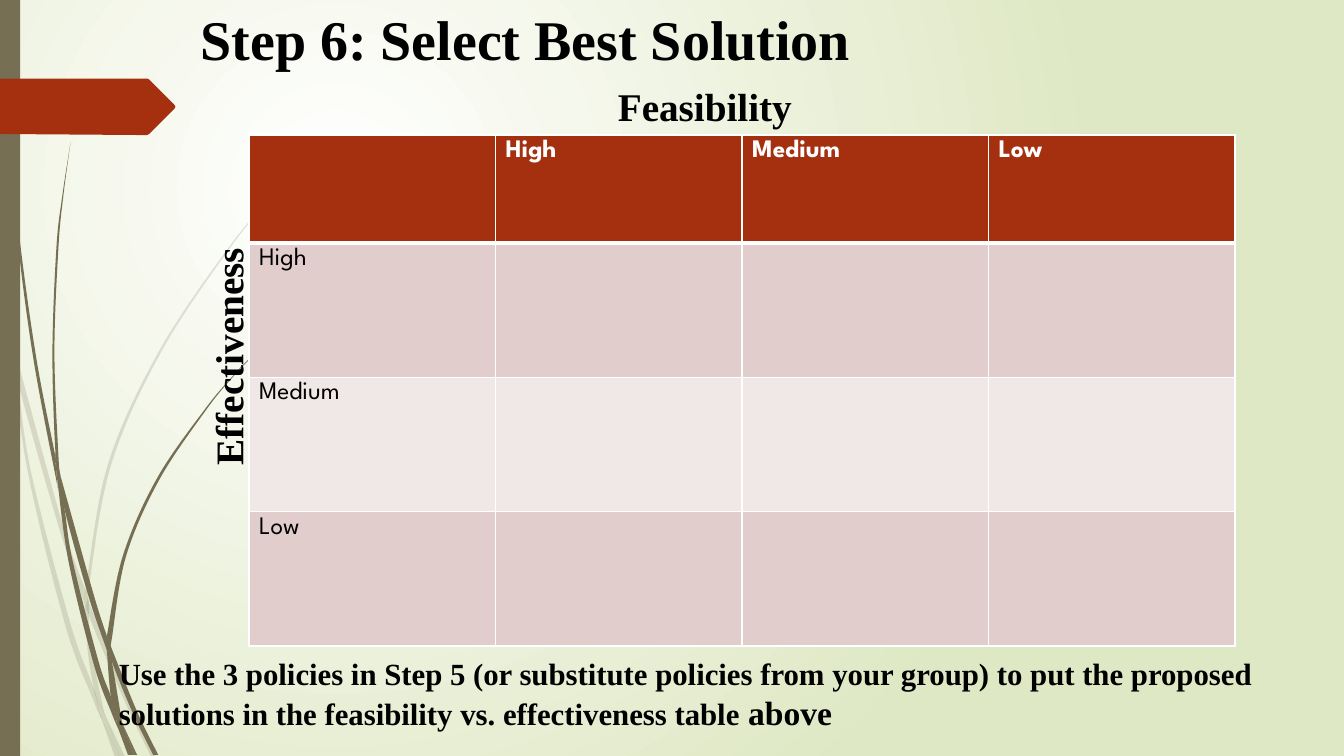
from lxml import etree
from pptx import Presentation
from pptx.dml.color import RGBColor as RGB
from pptx.enum.shapes import MSO_SHAPE as SHAPE
from pptx.enum.text import MSO_AUTO_SIZE as FIT
from pptx.oxml.ns import qn
from pptx.util import Pt

PX = 9144
BLACK = RGB(0, 0, 0)
WHITE = RGB(255, 255, 255)
PALE_GREEN = RGB(0xDF, 0xE8, 0xC4)
OLIVE = RGB(0x76, 0x6F, 0x54)
RUST = RGB(0xA5, 0x30, 0x10)
ROSE = RGB(0xE1, 0xCD, 0xCC)
BLUSH = RGB(0xF0, 0xE8, 0xE7)

FAINT_BLADES = [
    ([(0, 299), (10, 344), (11, 350)], [(11, 350), (9, 322), (0, 282)]),
    ([(14, 345), (17, 376), (58, 522), (84, 599)], [(85, 586), (62, 520), (14, 345)]),
    ([(88, 596), (88, 610), (123, 694), (150, 751)],
     [(155, 751), (127, 692), (92, 607), (88, 596)]),
    ([(105, 711), (119, 751)], [(124, 751), (105, 711)]),
    ([(11, 350), (28, 470), (65, 621), (92, 693), (101, 714)],
     [(99, 707), (93, 683), (70, 619), (31, 469), (17, 376), (11, 350)]),
    ([(84, 599), (87, 646), (93, 683), (96, 692), (105, 711)],
     [(103, 706), (91, 646), (88, 610), (88, 608), (84, 599)]),
    ([(312, 153), (289, 175), (268, 197), (228, 244), (158, 348), (107, 461),
      (85, 584), (85, 586)],
     [(88, 596), (88, 584), (110, 462), (160, 349), (229, 245), (268, 198),
      (290, 175), (312, 154)]),
    ([(101, 714), (114, 751)], [(119, 751), (101, 714)]),
    ([(85, 586), (84, 599), (88, 608)], [(88, 610), (88, 596), (85, 586)]),
    ([(93, 683), (99, 707), (101, 714), (119, 751)],
     [(119, 751), (105, 711), (96, 692), (93, 683)]),
]
DARK_BLADES = [
    ([(3, 0), (5, 48), (7, 110), (17, 233), (33, 355), (56, 477), (57, 481)],
     [(55, 457), (55, 453), (36, 355), (19, 232), (8, 109), (5, 48), (4, 0)]),
    ([(60, 472), (64, 505), (88, 592), (106, 645)],
     [(106, 633), (106, 631), (93, 590), (60, 472)]),
    ([(110, 641), (111, 656), (132, 708), (152, 749)],
     [(157, 749), (136, 706), (113, 649), (110, 641)]),
    ([(57, 477), (68, 557), (93, 659), (111, 708), (117, 722)],
     [(116, 717), (110, 691), (98, 657), (72, 556), (64, 505), (57, 477)]),
    ([(70, 141), (62, 193), (56, 245), (52, 349), (55, 449), (60, 472)],
     [(60, 472), (58, 453), (54, 349), (58, 245), (63, 193), (70, 141)]),
    ([(122, 719), (133, 749)], [(136, 749), (122, 719)]),
    ([(55, 449), (55, 453), (57, 477), (64, 505)], [(60, 472), (55, 449)]),
    ([(260, 344), (245, 358), (231, 373), (204, 405), (156, 474), (122, 551),
      (106, 631)],
     [(110, 641), (111, 633), (125, 552), (158, 476), (205, 406), (231, 374),
      (245, 359), (261, 344)]),
    ([(117, 722), (127, 749)], [(131, 749), (117, 722)]),
    ([(106, 645), (110, 691), (116, 706), (122, 719)],
     [(121, 716), (111, 656), (109, 651), (106, 645)]),
    ([(106, 631), (106, 645), (109, 651)], [(111, 656), (110, 641), (106, 631)]),
    ([(110, 691), (116, 717), (117, 722), (130, 749)],
     [(133, 749), (122, 719), (116, 706), (110, 691)]),
]
ARROW = [(0, 78), (146, 78), (148, 79), (173, 104), (174, 106), (173, 108),
         (148, 133), (146, 134), (136, 134), (0, 133)]
LEVELS = ["High", "Medium", "Low"]


def bends(edge):
    """Return the control points and end of each curve along an edge."""
    pts = [edge[0], *edge, edge[-1]]
    return [([q + (r - p) / 6 for p, q, r in zip(a, b, c)],
             [r - (o - q) / 6 for q, r, o in zip(b, c, d)], c)
            for a, b, c, d in zip(pts, pts[1:], pts[2:], pts[3:])]


class Deck:
    """Holds the slide and draws its elements in one style."""

    serif = "Times New Roman"
    sans = "League Spartan"

    def __init__(self, width, height):
        self.prs = Presentation()
        self.prs.slide_width, self.prs.slide_height = width * PX, height * PX
        self.s = self.prs.slides.add_slide(self.prs.slide_layouts[6])

    def background(self, inner, outer):
        fill = self.s.background.fill
        fill.gradient()
        for stop, color, position in zip(fill.gradient_stops, (inner, outer), (0, 1)):
            stop.color.rgb, stop.position = color, position
        lin = self.s.element.find(".//" + qn("a:lin"))
        path = etree.Element(qn("a:path"), path="circle")
        etree.SubElement(path, qn("a:fillToRect"), l="50000", t="50000",
                         r="100000", b="100000")
        lin.getparent().replace(lin, path)

    def paint(self, sp, color, opacity=100):
        sp.shadow.inherit = False
        sp.fill.solid()
        sp.fill.fore_color.rgb = color
        sp.line.fill.background()
        if opacity < 100:
            clr = sp.element.spPr.find(".//" + qn("a:srgbClr"))
            etree.SubElement(clr, qn("a:alpha"), val=str(opacity * 1000))

    def bar(self, x, y, w, h, color):
        box = [v * PX for v in (x, y, w, h)]
        self.paint(self.s.shapes.add_shape(SHAPE.RECTANGLE, *box), color)

    def outline(self, shapes, pts, color, opacity=100):
        pts = [(x * PX, y * PX) for x, y in pts]
        builder = shapes.build_freeform(*pts[0])
        builder.add_line_segments(pts[1:], close=True)
        sp = builder.convert_to_shape()
        self.paint(sp, color, opacity)
        return sp

    def blade(self, shapes, left, right, opacity):
        pts = left + right
        sp = self.outline(shapes, pts, OLIVE, opacity)
        x0, y0 = min(x for x, y in pts), min(y for x, y in pts)
        curves = bends(left) + [(left[-1], right[0], right[0])] + bends(right)
        for line, curve in zip(sp.element.findall(".//" + qn("a:lnTo")), curves):
            bezier = etree.Element(qn("a:cubicBezTo"))
            for x, y in curve:
                etree.SubElement(bezier, qn("a:pt"), x=str(round((x - x0) * PX)),
                                 y=str(round((y - y0) * PX)))
            line.getparent().replace(line, bezier)

    def grass(self, blades, opacity):
        shapes = self.s.shapes.add_group_shape().shapes
        for left, right in blades:
            self.blade(shapes, left, right, opacity)

    def font(self, r, name, size, color, bold):
        r.font.name, r.font.size, r.font.bold = name, Pt(size), bold
        r.font.color.rgb = color

    def text(self, x, y, w, h, runs, wrap=True, rotation=0):
        sp = self.s.shapes.add_textbox(*[v * PX for v in (x, y, w, h)])
        sp.rotation = rotation
        tf = sp.text_frame
        tf.word_wrap, tf.auto_size = wrap, FIT.SHAPE_TO_FIT_TEXT
        for words, size in runs:
            r = tf.paragraphs[0].add_run()
            r.text = words
            self.font(r, self.serif, size, BLACK, True)

    def border(self, cell, **widths):
        tc_pr = cell._tc.get_or_add_tcPr()
        for side, width in widths.items():
            ln = etree.SubElement(tc_pr, qn("a:ln" + side), w=str(Pt(width)))
            fill = etree.SubElement(ln, qn("a:solidFill"))
            etree.SubElement(fill, qn("a:srgbClr"), val=str(WHITE))

    def table(self, x, y, w, h, head, rows, fills):
        box = [v * PX for v in (x, y, w, h)]
        table = self.s.shapes.add_table(len(rows), len(rows[0]), *box).table
        for col in table.columns:
            col.width = w * PX // len(rows[0])
        for i, (words, fill) in enumerate(zip(rows, fills)):
            table.rows[i].height = (h - head) * PX // (len(rows) - 1) if i else head * PX
            for cell, word in zip(table.rows[i].cells, words):
                self.border(cell, L=1, R=1, T=3 if i == 1 else 1, B=1 if i else 3)
                cell.fill.solid()
                cell.fill.fore_color.rgb = fill
                cell.text_frame.text = word
                for r in cell.text_frame.paragraphs[0].runs:
                    self.font(r, self.sans, 18, BLACK if i else WHITE, i == 0)


def main():
    deck = Deck(1333, 750)
    deck.background(WHITE, PALE_GREEN)
    deck.grass(FAINT_BLADES, 20)
    deck.grass(DARK_BLADES, 100)
    deck.bar(0, 0, 20, 750, OLIVE)
    deck.outline(deck.s.shapes, ARROW, RUST)
    deck.text(189, 0, 672, 77, [("Step 6: Select Best Solution", 40)], wrap=False)
    rows = [["", *LEVELS]] + [[level, "", "", ""] for level in LEVELS]
    deck.table(247, 134, 978, 507, 107, rows, [RUST, ROSE, BLUSH, ROSE])
    deck.text(603, 77, 205, 57, [("Feasibility", 28)])
    deck.text(99, 316, 254, 57, [("Effectiveness", 28)], rotation=270)
    deck.text(108, 645, 1226, 88, [
        ("Use the 3 policies in Step 5 (or substitute policies from your group) to put "
         "the proposed solutions in the feasibility vs. effectiveness table", 22),
        (" above", 24)])
    deck.prs.save("out.pptx")


if __name__ == "__main__":
    main()
